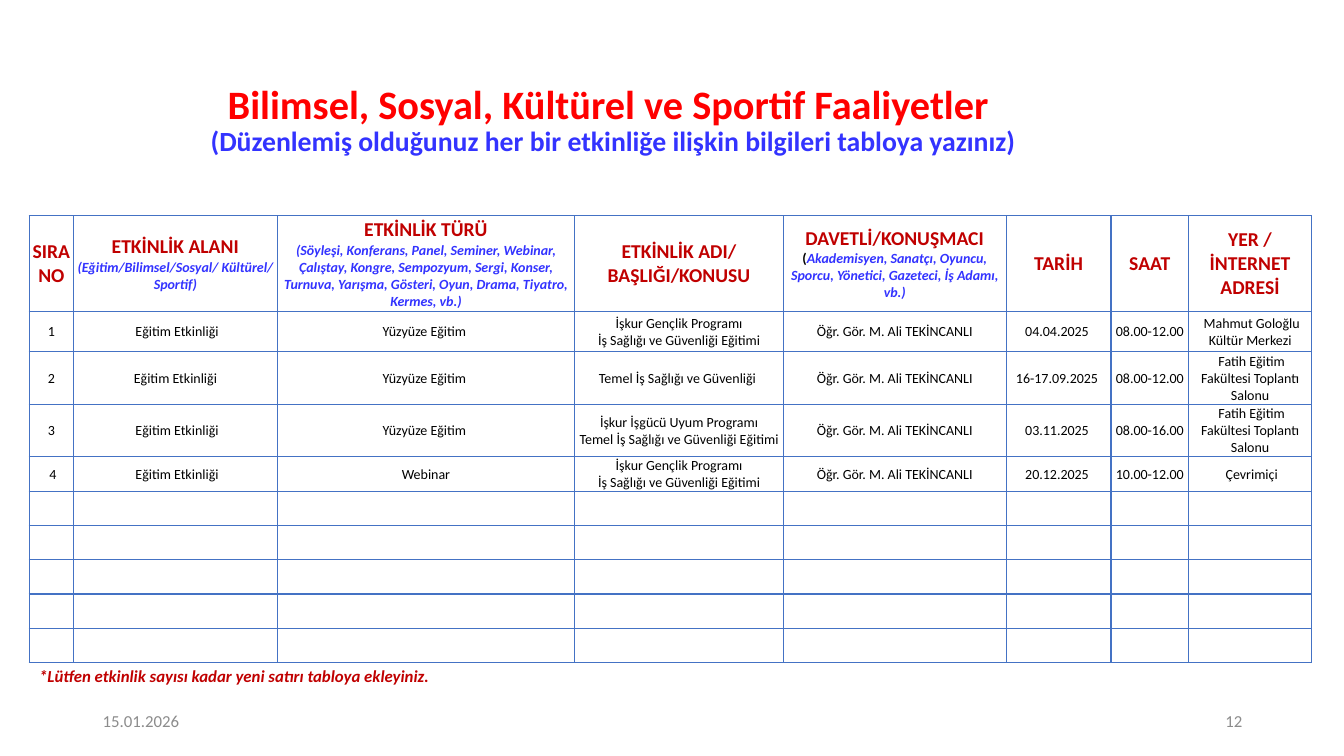
"""Build the slide with the table of scientific, social, cultural and sports events."""
import lxml.etree
import pptx
import pptx.dml.color
import pptx.enum.text
import pptx.oxml.ns
import pptx.util

PX = 9144
RED, BLUE, DARK_RED, BLACK, GREY = "FF0000", "3333FF", "C00000", "000000", "8C8C8C"
BORDER = "4472C4"
ALIGN = pptx.enum.text.PP_ALIGN
MIDDLE = pptx.enum.text.MSO_ANCHOR.MIDDLE

COLUMN_WIDTHS = [44, 202, 295, 207, 221, 104, 77, 122]
ROW_HEIGHTS = [95, 40, 52, 52] + [34] * 6

LABEL = (14, DARK_RED, True, False)
HINT = (10, BLUE, True, True)
PAREN = (10, BLACK, True, False)
BODY = (10, BLACK, False, False)

HEADERS = [
    [[("SIRA NO", LABEL)]],
    [[("ETKİNLİK ALANI ", LABEL), ("(Eğitim/Bilimsel/Sosyal/ Kültürel/ Sportif)", HINT)]],
    [
        [("ETKİNLİK TÜRÜ", LABEL)],
        [("(Söyleşi, Konferans, Panel, Seminer, Webinar, Çalıştay, Kongre, Sempozyum, "
          "Sergi, Konser, Turnuva, Yarışma, Gösteri, Oyun, Drama, Tiyatro, Kermes, vb.)", HINT)],
    ],
    [[("ETKİNLİK ADI/ BAŞLIĞI/KONUSU", LABEL)]],
    [[
        ("DAVETLİ/KONUŞMACI ", LABEL),
        ("(", PAREN),
        ("Akademisyen, Sanatçı, Oyuncu, Sporcu, Yönetici, Gazeteci, İş Adamı, vb.)", HINT),
    ]],
    [[("TARİH", LABEL)]],
    [[("SAAT", LABEL)]],
    [[("YER / İNTERNET ADRESİ", LABEL)]],
]

AREA = " Eğitim Etkinliği"
FACE_TO_FACE = "Yüzyüze Eğitim "
SPEAKER = "Öğr. Gör. M. Ali TEKİNCANLI"
YOUTH = "İşkur Gençlik Programı\nİş Sağlığı ve Güvenliği Eğitimi"
WORKFORCE = "İşkur İşgücü Uyum Programı\nTemel İş Sağlığı ve Güvenliği Eğitimi"
FACULTY = " Fatih Eğitim Fakültesi Toplantı Salonu"

EVENTS = [
    ["1", AREA, FACE_TO_FACE, YOUTH, SPEAKER, "04.04.2025 ", "08.00-12.00",
     " Mahmut Goloğlu Kültür Merkezi"],
    ["2", "Eğitim Etkinliği", FACE_TO_FACE, "Temel İş Sağlığı ve Güvenliği ", SPEAKER,
     "16-17.09.2025 ", "08.00-12.00", FACULTY],
    ["3", AREA, FACE_TO_FACE, WORKFORCE, SPEAKER, "03.11.2025 ", "08.00-16.00", FACULTY],
    [" 4", AREA, "Webinar", YOUTH, SPEAKER, "20.12.2025 ", "10.00-12.00", " Çevrimiçi"],
]


def color(value):
    """Turn a hex string into a colour."""
    return pptx.dml.color.RGBColor.from_string(value)


def set_font(font, style):
    """Apply size, colour, bold and italic to a font."""
    size, fill, bold, italic = style
    font.name = "Calibri"
    font.size = pptx.util.Pt(size)
    font.color.rgb = color(fill)
    font.bold = bold
    font.italic = italic


def fill_paragraph(paragraph, runs, alignment):
    """Write styled runs, with the font on the paragraph where all runs agree."""
    paragraph.alignment = alignment
    set_font(paragraph.font, runs[0][1])
    for text, style in runs:
        run = paragraph.add_run()
        run.text = text
        if len(runs) > 1:
            set_font(run.font, style)


def place(shape, left, top, width, height):
    """Move and size a shape in px."""
    shape.left, shape.top = left * PX, top * PX
    shape.width, shape.height = width * PX, height * PX


def add_title(slide):
    """Fill the title placeholder with a heading and an instruction line."""
    title = slide.shapes.title
    place(title, 39, 76, 1138, 88)
    frame = title.text_frame
    frame.auto_size = pptx.enum.text.MSO_AUTO_SIZE.NONE
    frame.vertical_anchor = MIDDLE
    paragraph = frame.paragraphs[0]
    paragraph.line_spacing = 0.9
    heading = (28.8, RED, True, False)
    fill_paragraph(paragraph, [("Bilimsel, Sosyal, Kültürel ve Sportif Faaliyetler ", heading)],
                   ALIGN.CENTER)
    paragraph.add_line_break()
    instruction = paragraph.add_run()
    instruction.text = "(Düzenlemiş olduğunuz her bir etkinliğe ilişkin bilgileri tabloya yazınız)"
    set_font(instruction.font, (19.8, BLUE, True, False))


def add_text(slide, box, text, style, alignment=ALIGN.LEFT, anchor=MIDDLE):
    """Add a one-line text box."""
    frame_shape = slide.shapes.add_textbox(0, 0, 0, 0)
    place(frame_shape, *box)
    frame = frame_shape.text_frame
    frame.word_wrap = True
    frame.vertical_anchor = anchor
    fill_paragraph(frame.paragraphs[0], [(text, style)], alignment)


def add_borders(cell):
    """Draw the four borders of a cell."""
    properties = cell._tc.get_or_add_tcPr()
    for side in ("a:lnL", "a:lnR", "a:lnT", "a:lnB"):
        line = lxml.etree.SubElement(properties, pptx.oxml.ns.qn(side), w="12700")
        solid = lxml.etree.SubElement(line, pptx.oxml.ns.qn("a:solidFill"))
        lxml.etree.SubElement(solid, pptx.oxml.ns.qn("a:srgbClr"), val=BORDER)


def fill_cell(cell, paragraphs):
    """Format a cell and write its paragraphs."""
    add_borders(cell)
    cell.fill.background()
    cell.vertical_anchor = MIDDLE
    cell.margin_left = cell.margin_right = cell.margin_top = PX
    cell.margin_bottom = 0
    set_font(cell.text_frame.paragraphs[0].font, BODY)
    for index, runs in enumerate(paragraphs):
        frame = cell.text_frame
        paragraph = frame.add_paragraph() if index else frame.paragraphs[0]
        fill_paragraph(paragraph, runs, ALIGN.CENTER)


def add_event_table(slide):
    """Add the table of events with its empty rows."""
    table = slide.shapes.add_table(
        len(ROW_HEIGHTS), len(COLUMN_WIDTHS), 29 * PX, 214 * PX,
        sum(COLUMN_WIDTHS) * PX, sum(ROW_HEIGHTS) * PX).table
    table.first_row = table.horz_banding = False
    for column, width in zip(table.columns, COLUMN_WIDTHS):
        column.width = width * PX
    for row, height in zip(table.rows, ROW_HEIGHTS):
        row.height = height * PX
    events = [[[[(line, BODY)] for line in text.split("\n")] for text in event]
              for event in EVENTS]
    empty_count = len(ROW_HEIGHTS) - 1 - len(events)
    contents = [HEADERS] + events + [[[]] * len(COLUMN_WIDTHS)] * empty_count
    for row, row_contents in zip(table.rows, contents):
        for cell, paragraphs in zip(row.cells, row_contents):
            fill_cell(cell, paragraphs)


def main():
    """Build and save the slide."""
    presentation = pptx.Presentation()
    presentation.slide_width, presentation.slide_height = 1333 * PX, 750 * PX
    slide = presentation.slides.add_slide(presentation.slide_layouts[5])
    add_title(slide)
    footer = (12, GREY, False, False)
    add_text(slide, (92, 695, 300, 40), "15.01.2026", footer)
    add_text(slide, (942, 695, 300, 40), "12", footer, ALIGN.RIGHT)
    add_event_table(slide)
    add_text(slide, (29, 656, 500, 30),
             "*Lütfen etkinlik sayısı kadar yeni satırı tabloya ekleyiniz.",
             (12, DARK_RED, True, True), anchor=pptx.enum.text.MSO_ANCHOR.TOP)
    presentation.save("out.pptx")


if __name__ == "__main__":
    main()
